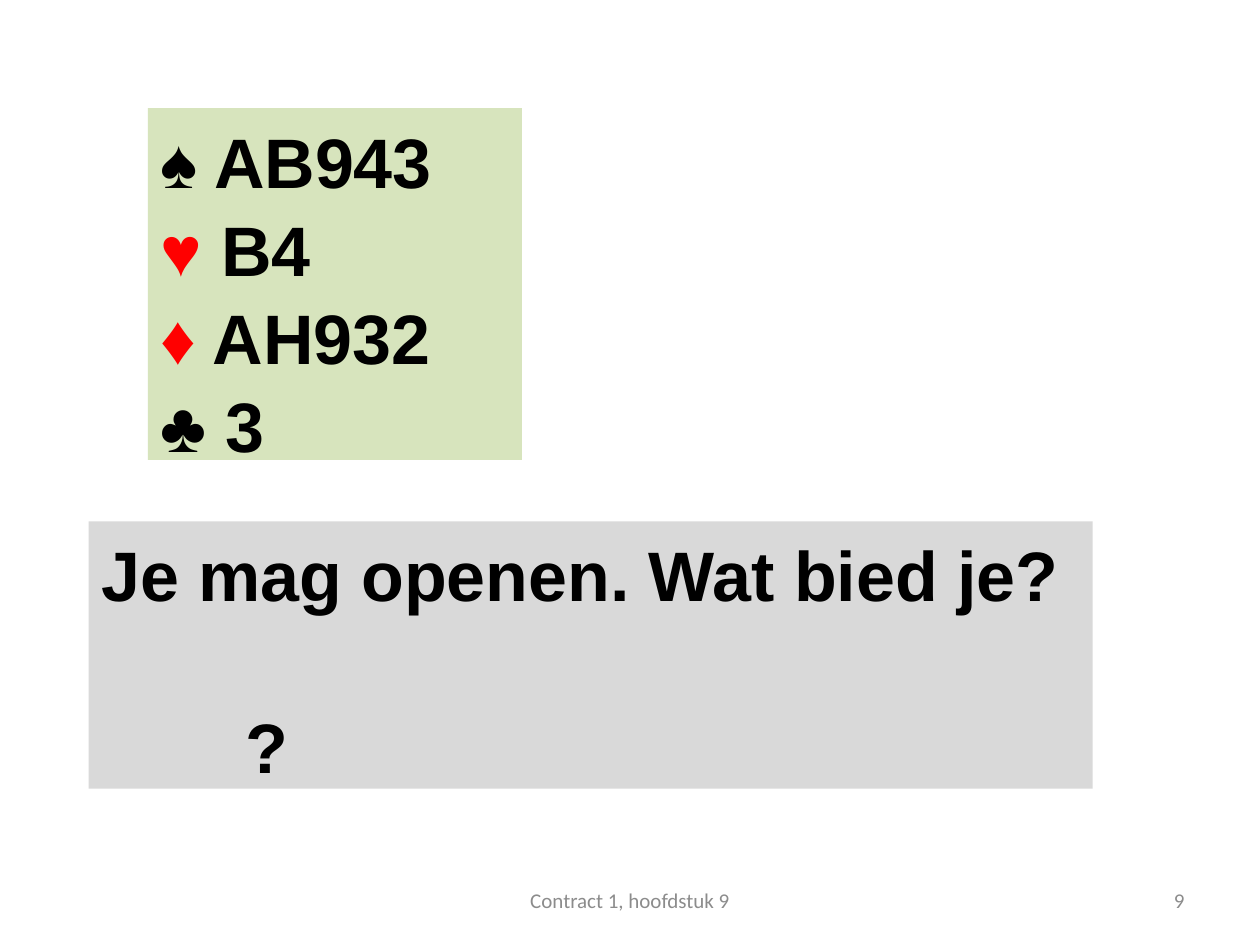
from pptx import Presentation
from pptx.dml.color import RGBColor
from pptx.enum.shapes import MSO_SHAPE
from pptx.enum.text import MSO_ANCHOR, PP_ALIGN
from pptx.util import Cm, Pt

BLACK, RED, GREY = "000000", "FF0000", "8C8C8C"
HAND = [("♠", "AB943", BLACK), ("♥", "B4", RED),
        ("♦", "AH932", RED), ("♣", "3", BLACK)]


def rgb(color):
    return RGBColor.from_string(color)


def add_text(p, text, size=40, font="Arial", color=BLACK, bold=True):
    r = p.add_run()
    r.text = text
    r.font.size, r.font.name, r.font.bold = Pt(size), font, bold
    r.font.color.rgb = rgb(color)


def add_panel(s, box, fill):
    """Draw a filled rectangle and return its top-left aligned text frame."""
    sp = s.shapes.add_shape(MSO_SHAPE.RECTANGLE, *map(Cm, box))
    sp.shadow.inherit = False
    sp.fill.solid()
    sp.fill.fore_color.rgb = rgb(fill)
    sp.line.fill.background()
    tf = sp.text_frame
    tf.word_wrap = True
    tf.vertical_anchor = MSO_ANCHOR.TOP
    return tf


def add_line(tf, first):
    p = tf.paragraphs[0] if first else tf.add_paragraph()
    p.alignment = PP_ALIGN.LEFT
    p.line_spacing = 1.05
    return p


def add_hand(s, box):
    tf = add_panel(s, box, "D7E4BD")
    for i, (suit, cards, color) in enumerate(HAND):
        p = add_line(tf, i == 0)
        add_text(p, suit, color=color)
        add_text(p, f" {cards}")


def add_question(s, box):
    tf = add_panel(s, box, "D9D9D9")
    add_text(add_line(tf, True), "Je mag openen. Wat bied je?")
    p = add_line(tf, False)
    p.space_before = Pt(48)
    p._p.get_or_add_pPr().set("marL", str(Cm(2.9)))
    add_text(p, "?")


def add_footer(s, box, text, align):
    tf = s.shapes.add_textbox(*map(Cm, box)).text_frame
    tf.word_wrap = True
    tf.vertical_anchor = MSO_ANCHOR.MIDDLE
    p = tf.paragraphs[0]
    p.alignment = align
    add_text(p, text, size=12, font="Calibri", color=GREY, bold=False)


def main():
    prs = Presentation()
    prs.slide_width, prs.slide_height = Cm(25.4), Cm(19.05)
    s = prs.slides.add_slide(prs.slide_layouts[6])
    add_hand(s, (2.98, 2.18, 7.54, 7.09))
    add_question(s, (1.79, 10.51, 20.24, 5.39))
    add_footer(s, (18.2, 17.65, 5.93, 1.01), "9", PP_ALIGN.RIGHT)
    add_footer(s, (8.68, 17.65, 8.04, 1.01), "Contract 1, hoofdstuk 9", PP_ALIGN.CENTER)
    prs.save("out.pptx")


if __name__ == "__main__":
    main()
